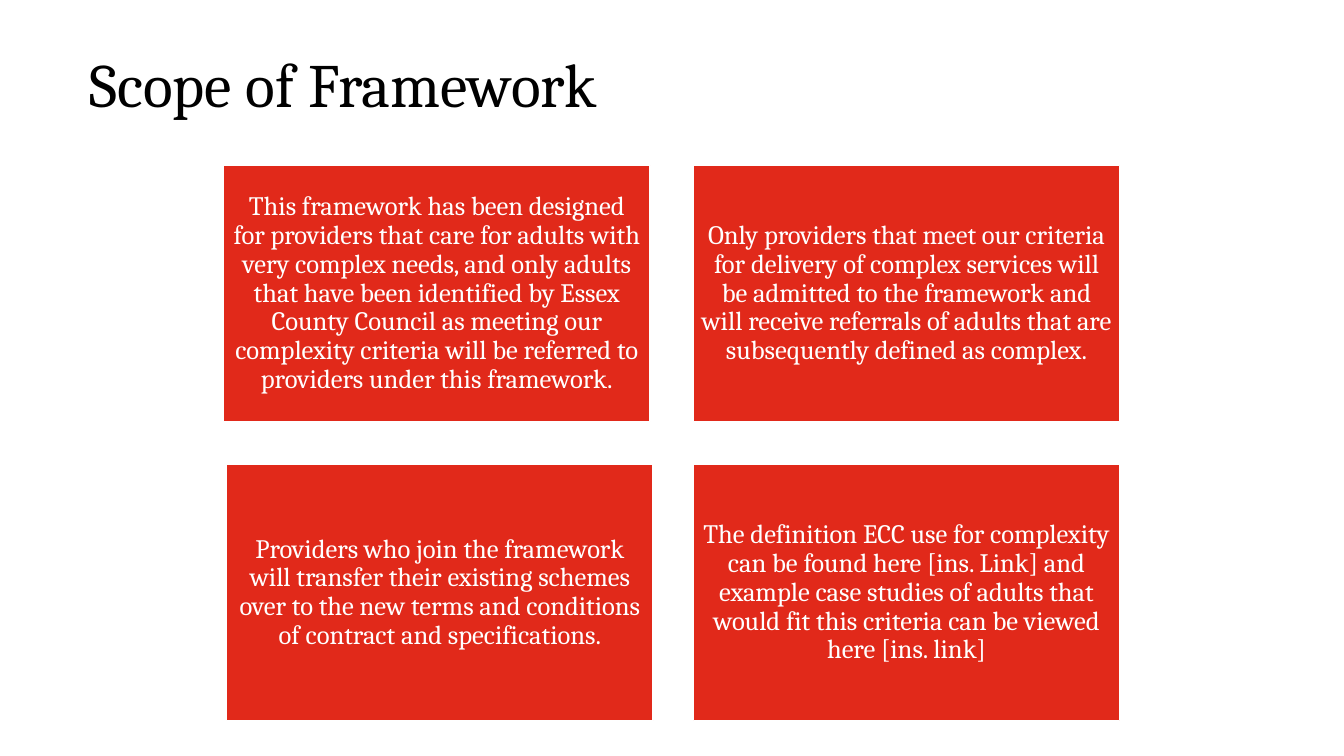
from pptx import Presentation
from pptx.dml.color import RGBColor
from pptx.enum.shapes import MSO_SHAPE
from pptx.enum.text import MSO_ANCHOR, PP_ALIGN
from pptx.util import Pt

RED = RGBColor(0xE1, 0x29, 0x1A)
WHITE = RGBColor(0xFF, 0xFF, 0xFF)
BLACK = RGBColor(0x00, 0x00, 0x00)

# Card grid, in points
LEFT, TOP = 159.8, 118.2
WIDE, HIGH = 304.6, 182.7
STEP_X, STEP_Y = 335.5, 213.8
NUDGE = 2.2  # the third card sits slightly to the right

CARDS = [
    "This framework has been designed for providers that care for adults with "
    "very complex needs, and only adults that have been identified by Essex "
    "County Council as meeting our complexity criteria will be referred to "
    "providers under this framework.",
    "Only providers that meet our criteria for delivery of complex services "
    "will be admitted to the framework and will receive referrals of adults "
    "that are subsequently defined as complex.",
    "Providers who join the framework will transfer their existing schemes "
    "over to the new terms and conditions of contract and specifications.",
    "The definition ECC use for complexity can be found here [ins. Link] and "
    "example case studies of adults that would fit this criteria can be "
    "viewed here [ins. link]",
]


class Deck:
    """Holds the text style and the current slide."""

    font = "Cambria"
    space = 0.9
    inset = 5.7

    def __init__(self, slide):
        self.slide = slide

    def label(self, frame, text, size, color, align):
        frame.word_wrap = True
        frame.vertical_anchor = MSO_ANCHOR.MIDDLE
        para = frame.paragraphs[0]
        para.alignment = align
        para.line_spacing = self.space
        run = para.add_run()
        run.text = text
        run.font.name = self.font
        run.font.size = Pt(size)
        run.font.color.rgb = color

    def title(self, text, x, y, w, h):
        box = self.slide.shapes.add_textbox(Pt(x), Pt(y), Pt(w), Pt(h))
        self.label(box.text_frame, text, 44, BLACK, PP_ALIGN.LEFT)

    def card(self, text, x, y, w, h):
        box = self.slide.shapes.add_shape(
            MSO_SHAPE.RECTANGLE, Pt(x), Pt(y), Pt(w), Pt(h))
        box.shadow.inherit = False
        box.fill.solid()
        box.fill.fore_color.rgb = RED
        box.line.color.rgb = WHITE
        box.line.width = Pt(1)
        frame = box.text_frame
        frame.margin_left = frame.margin_right = Pt(self.inset)
        frame.margin_top = frame.margin_bottom = Pt(self.inset)
        self.label(frame, text, 19, WHITE, PP_ALIGN.CENTER)


def main():
    show = Presentation()
    show.slide_width, show.slide_height = Pt(960), Pt(540)
    deck = Deck(show.slides.add_slide(show.slide_layouts[6]))

    # Heading
    deck.title("Scope of Framework", 56.9, 10.1, 828, 104.4)

    # Two by two cards
    for i, text in enumerate(CARDS):
        row, col = divmod(i, 2)
        shift = NUDGE if i == 2 else 0
        deck.card(text, LEFT + col * STEP_X + shift, TOP + row * STEP_Y,
                  WIDE, HIGH)

    show.save("out.pptx")


if __name__ == "__main__":
    main()
